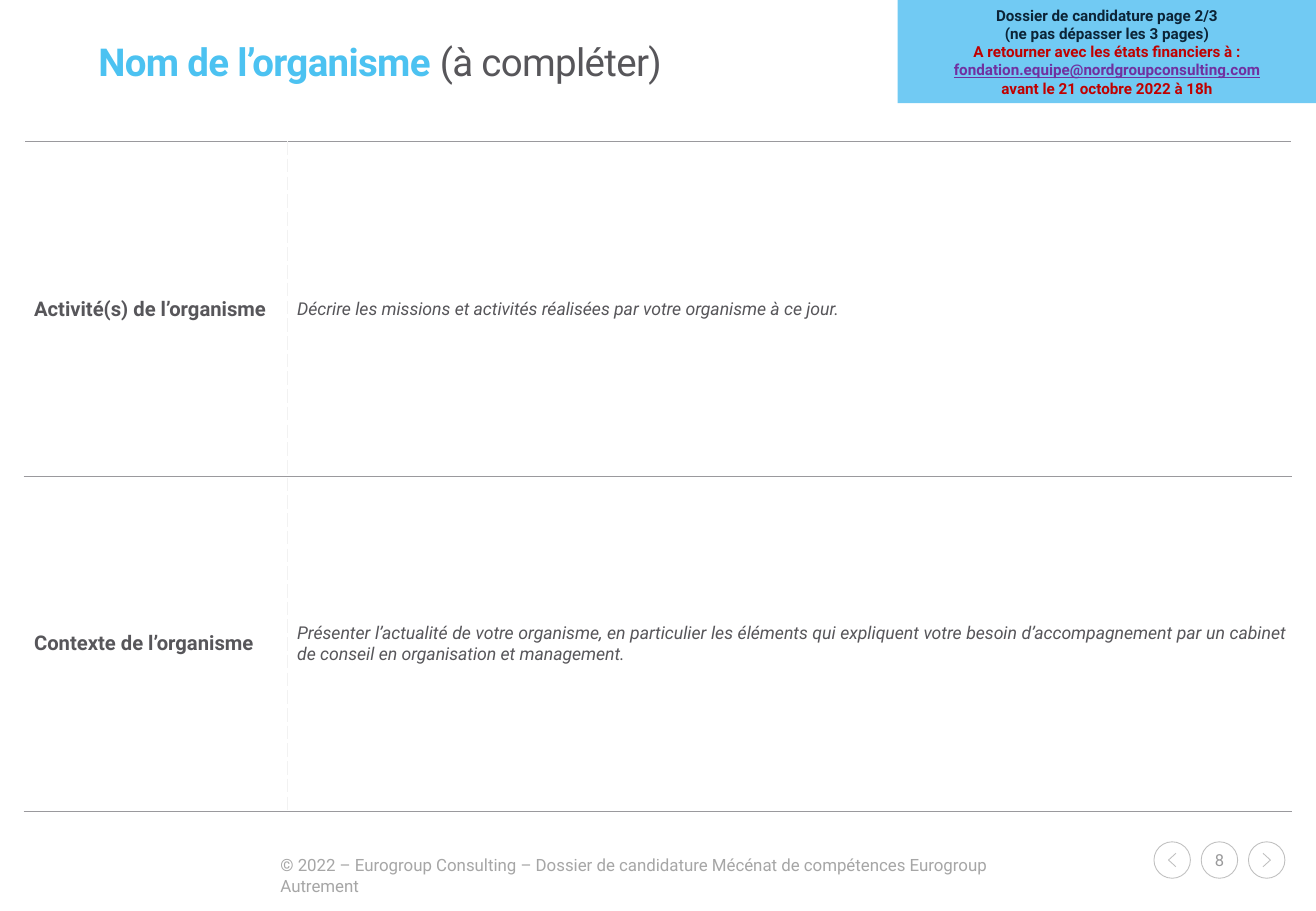
from lxml import etree
from pptx import Presentation
from pptx.dml.color import RGBColor
from pptx.enum.shapes import MSO_SHAPE
from pptx.enum.text import MSO_ANCHOR, PP_ALIGN
from pptx.oxml.ns import qn
from pptx.util import Pt

OVAL, RECT = MSO_SHAPE.OVAL, MSO_SHAPE.RECTANGLE
MIDDLE = MSO_ANCHOR.MIDDLE
LEFT, CENTER, JUSTIFY = PP_ALIGN.LEFT, PP_ALIGN.CENTER, PP_ALIGN.JUSTIFY
GREY, SKY, RED, RING = "57565A", "4CC2F1", "C00000", "BFBFBF"
RULE, DASH = ("9A999D", 0.75, "solid"), ("F2F2F2", 1, "sysDash")

ROWS = [
    ("Activité(s) de l’organisme",
     "Décrire les missions et activités réalisées par votre organisme à ce jour."),
    ("Contexte de l’organisme",
     "Présenter l’actualité de votre organisme, en particulier les éléments qui "
     "expliquent votre besoin d’accompagnement par un cabinet de conseil en "
     "organisation et management."),
]
BANNER = [
    ("Dossier de candidature page 2/3", "0C2437", False),
    ("(ne pas dépasser les 3 pages)", "0C2437", False),
    ("A retourner avec les états financiers à :", RED, False),
    ("fondation.equipe@nordgroupconsulting.com", "7030A0", True),
    ("avant le 21 octobre 2022 à 18h", RED, False),
]
FOOTER = ("© 2022 – Eurogroup Consulting – Dossier de candidature "
          "Mécénat de compétences Eurogroup Autrement")


def rgb(value):
    return RGBColor.from_string(value)


def add_run(p, text, size, color, **formats):
    r = p.add_run()
    r.text = text
    r.font.color.rgb = rgb(color)
    for name, value in {"name": "Roboto", "size": Pt(size), **formats}.items():
        setattr(r.font, name, value)
    return r


def set_margins(obj, left, top, right, bottom):
    margins = {"left": left, "top": top, "right": right, "bottom": bottom}
    for side, value in margins.items():
        setattr(obj, f"margin_{side}", Pt(value))


def outline(shape):
    shape.shadow.inherit = False
    shape.fill.background()
    shape.line.color.rgb = rgb(RING)
    shape.line.width = Pt(0.5)


def add_border(cell, side, color, width, dash):
    tcPr = cell._tc.get_or_add_tcPr()
    ln = etree.SubElement(tcPr, qn(f"a:ln{side}"), w=str(Pt(width)))
    fill = etree.SubElement(ln, qn("a:solidFill"))
    etree.SubElement(fill, qn("a:srgbClr"), val=color)
    etree.SubElement(ln, qn("a:prstDash"), val=dash)


def place_title(s, x, y, w, h):
    title = s.shapes.title
    title.left, title.top, title.width, title.height = Pt(x), Pt(y), Pt(w), Pt(h)
    tf = title.text_frame
    tf.vertical_anchor = MIDDLE
    set_margins(tf, 0, 0, 0, 0)
    p = tf.paragraphs[0]
    p.alignment, p.line_spacing = LEFT, 0.86
    for text, color, bold in (("Nom de l’organisme ", SKY, True),
                              ("(à compléter)", GREY, False)):
        r = add_run(p, text, 22.8, color, bold=bold)
        r.font._element.set("spc", "-40")


def add_form(s, x, y, w, h, label_w):
    """Table with one row per question: label on the left, guidance on the right."""
    table = s.shapes.add_table(len(ROWS), 2, Pt(x), Pt(y), Pt(w), Pt(h)).table
    table.first_row = table.horz_banding = False
    for column, width in zip(table.columns, (label_w, w - label_w)):
        column.width = Pt(width)
    for i, texts in enumerate(ROWS):
        table.rows[i].height = Pt(h / len(ROWS))
        for j, text in enumerate(texts):
            cell = table.cell(i, j)
            cell.vertical_anchor = MIDDLE
            set_margins(cell, 5.8, 2.9, 2.9, 2.9)
            add_border(cell, "RL"[j], *DASH)
            add_border(cell, "T", *RULE)
            add_border(cell, "B", *RULE)
            cell.fill.solid()
            cell.fill.fore_color.rgb = rgb("FFFFFF")
            p = cell.text_frame.paragraphs[0]
            p.alignment = JUSTIFY if j else LEFT
            add_run(p, text, 10.5 if j else 12, GREY, bold=not j, italic=bool(j))


def add_banner(s, x, y, w, h):
    box = s.shapes.add_shape(RECT, Pt(x), Pt(y), Pt(w), Pt(h))
    box.shadow.inherit = False
    box.fill.solid()
    box.fill.fore_color.rgb = rgb("71CAF3")
    box.line.fill.background()
    tf = box.text_frame
    tf.vertical_anchor = MIDDLE
    for i, (text, color, underline) in enumerate(BANNER):
        p = tf.add_paragraph() if i else tf.paragraphs[0]
        p.alignment = CENTER
        add_run(p, text, 9, color, bold=True, underline=underline)


def add_chevron(s, cx, cy, direction):
    dx, dy = 2.2 * direction, 4
    points = [(Pt(cx + a), Pt(cy + b)) for a, b in ((-dx, -dy), (dx, 0), (-dx, dy))]
    builder = s.shapes.build_freeform(*points[0], scale=1.0)
    builder.add_line_segments(points[1:], close=False)
    outline(builder.convert_to_shape())


def add_navigation(s, x, y, size, step):
    """Three rings: previous, page number, next."""
    for i in range(3):
        ring = s.shapes.add_shape(OVAL, Pt(x + i * step), Pt(y), Pt(size), Pt(size))
        outline(ring)
        if i == 1:
            tf = ring.text_frame
            tf.word_wrap, tf.vertical_anchor = False, MIDDLE
            set_margins(tf, 0, 0, 0, 0)
            tf.paragraphs[0].alignment = CENTER
            add_run(tf.paragraphs[0], "8", 9.8, "9A9A9B")
        else:
            add_chevron(s, x + i * step + size / 2, y + size / 2, i - 1)


def add_footer(s, x, y, w, h):
    tf = s.shapes.add_textbox(Pt(x), Pt(y), Pt(w), Pt(h)).text_frame
    tf.word_wrap = True
    add_run(tf.paragraphs[0], FOOTER, 10, "A6A6A6")


def main():
    prs = Presentation()
    prs.slide_width, prs.slide_height = Pt(780), Pt(540)
    s = prs.slides.add_slide(prs.slide_layouts[5])
    add_navigation(s, 684, 499, 21.6, 28)
    add_footer(s, 159.1, 503.3, 466, 32)
    place_title(s, 58.3, 25, 663, 26.6)
    add_form(s, 14.4, 84, 751.2, 397, 156)
    add_banner(s, 532, 0, 248, 61.2)
    prs.save("out.pptx")


if __name__ == "__main__":
    main()
